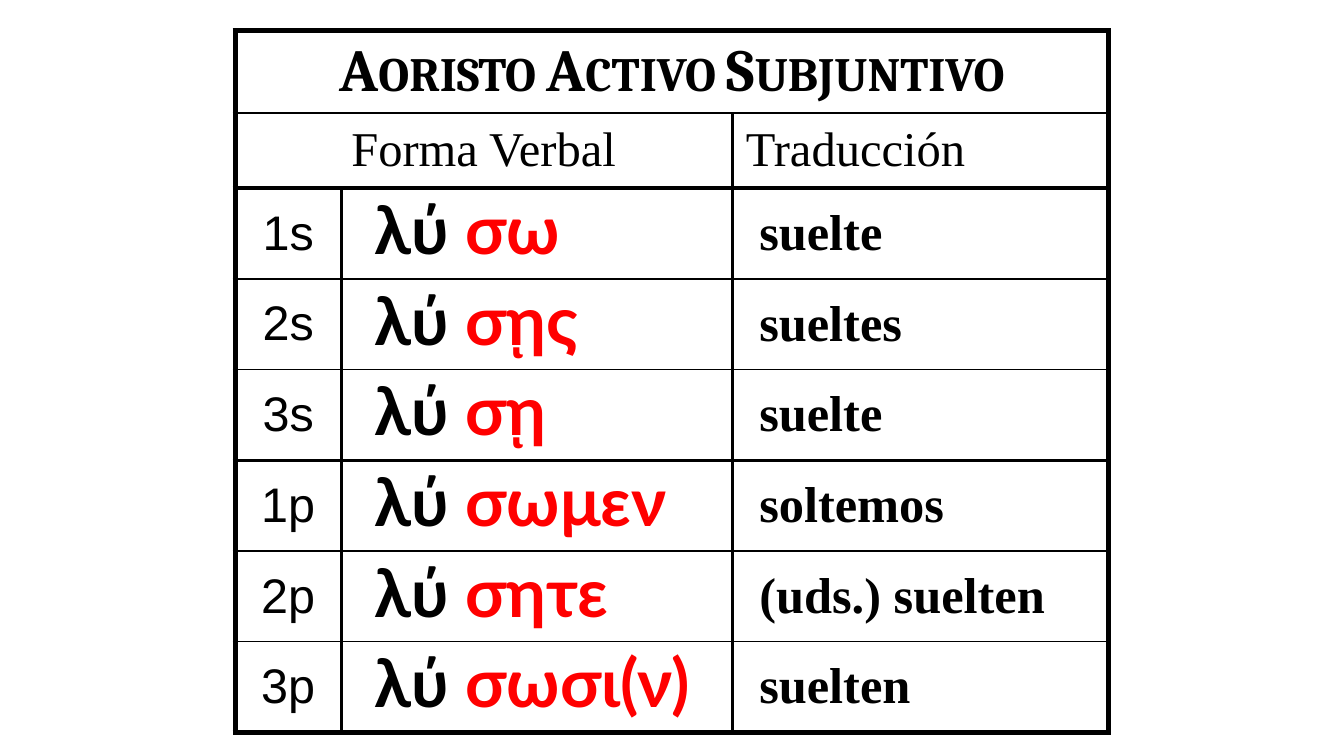
from pptx import Presentation
from pptx.dml.color import RGBColor
from pptx.enum.text import MSO_ANCHOR, PP_ALIGN
from pptx.oxml.ns import qn
from pptx.util import Pt
from lxml.etree import SubElement

PX = 4572  # EMU per px: 200 px to the inch
BLACK, RED = "000000", "FF0000"
COLUMN_WIDTHS = [158, 582, 560]
HEADER_HEIGHTS, FORM_HEIGHT = [122, 112], 135
LABEL_INSETS, VERB_INSETS = (20, 8), (14, 0)
HANGING, VERB_INDENT, MEANING_INDENT = (76, -76), (28, 8), (20, 0)
STEM = "λύ "
FORMS = [
    ("1s", "σω", "suelte"),
    ("2s", "σῃς", "sueltes"),
    ("3s", "σῃ", "suelte"),
    ("1p", "σωμεν", "soltemos"),
    ("2p", "σητε", "(uds.) suelten"),
    ("3p", "σωσι(ν)", "suelten"),
]
HORIZONTAL_RULES = [3, 1, 2, 1, 1, 2, 1, 1, 3]
VERTICAL_RULES = [3, 2, 2, 3]


def px(length):
    return length * PX


def color(hex_string):
    return RGBColor.from_string(hex_string)


def write_cell(cell, runs, font, size, bold=False, align=PP_ALIGN.LEFT,
               indent=HANGING, insets=LABEL_INSETS, anchor=MSO_ANCHOR.MIDDLE,
               small_caps=False):
    """Fill a cell with (text, colour) runs that share one style."""
    cell.margin_left = cell.margin_right = px(insets[0])
    cell.margin_top = cell.margin_bottom = px(insets[1])
    cell.vertical_anchor = anchor
    paragraph = cell.text_frame.paragraphs[0]
    paragraph.alignment = align
    properties = paragraph._p.get_or_add_pPr()
    properties.set("marL", str(px(indent[0])))
    properties.set("indent", str(px(indent[1])))
    for text, hex_string in runs:
        run = paragraph.add_run()
        run.text = text
        run.font.name, run.font.size, run.font.bold = font, Pt(size), bold
        run.font.color.rgb = color(hex_string)
        properties = run._r.get_or_add_rPr()
        if small_caps:
            properties.set("cap", "small")
        for script in ("a:ea", "a:cs"):
            SubElement(properties, qn(script)).set("typeface", font)


def rule_cell(cell, left, right, top, bottom):
    """Draw the four borders, given in points, and clear the fill."""
    properties = cell._tc.get_or_add_tcPr()
    for side, width in zip("LRTB", (left, right, top, bottom)):
        line = SubElement(properties, qn(f"a:ln{side}"), w=str(Pt(width)))
        fill = SubElement(line, qn("a:solidFill"))
        SubElement(fill, qn("a:srgbClr"), val=BLACK)
    cell.fill.background()


def rule_table(table):
    for row in range(len(table.rows)):
        for column in range(len(table.columns)):
            cell = table.cell(row, column)
            if cell.is_spanned:
                continue
            span = cell.span_width if cell.is_merge_origin else 1
            rule_cell(cell, VERTICAL_RULES[column], VERTICAL_RULES[column + span],
                      HORIZONTAL_RULES[row], HORIZONTAL_RULES[row + 1])


def add_conjugation_table(slide, left, top):
    heights = HEADER_HEIGHTS + [FORM_HEIGHT] * len(FORMS)
    table = slide.shapes.add_table(
        len(heights), len(COLUMN_WIDTHS), px(left), px(top),
        px(sum(COLUMN_WIDTHS)), px(sum(heights))).table
    table.first_row = table.horz_banding = False
    for column, width in zip(table.columns, COLUMN_WIDTHS):
        column.width = px(width)
    for row, height in zip(table.rows, heights):
        row.height = px(height)

    table.cell(0, 0).merge(table.cell(0, 2))
    table.cell(1, 0).merge(table.cell(1, 1))
    write_cell(table.cell(0, 0), [("Aoristo Activo Subjuntivo", BLACK)],
               "Cambria", 32, bold=True, align=PP_ALIGN.CENTER, small_caps=True)
    write_cell(table.cell(1, 0), [("Forma Verbal", BLACK)],
               "Times New Roman", 26, align=PP_ALIGN.CENTER)
    write_cell(table.cell(1, 2), [("Traducción", BLACK)],
               "Times New Roman", 26, align=PP_ALIGN.JUSTIFY)

    for row, (person, ending, meaning) in enumerate(FORMS, start=len(HEADER_HEIGHTS)):
        write_cell(table.cell(row, 0), [(person, BLACK)], "Arial", 26,
                   align=PP_ALIGN.CENTER)
        write_cell(table.cell(row, 1), [(STEM, BLACK), (ending, RED)], "Lato", 36,
                   bold=True, indent=VERB_INDENT, insets=VERB_INSETS,
                   anchor=MSO_ANCHOR.TOP)
        write_cell(table.cell(row, 2), [(meaning, BLACK)], "Times New Roman", 27,
                   bold=True, indent=MEANING_INDENT)
    rule_table(table)


def main():
    presentation = Presentation()
    presentation.slide_width, presentation.slide_height = px(2000), px(1125)
    slide = presentation.slides.add_slide(presentation.slide_layouts[6])
    add_conjugation_table(slide, left=350, top=46)
    presentation.save("out.pptx")


if __name__ == "__main__":
    main()
